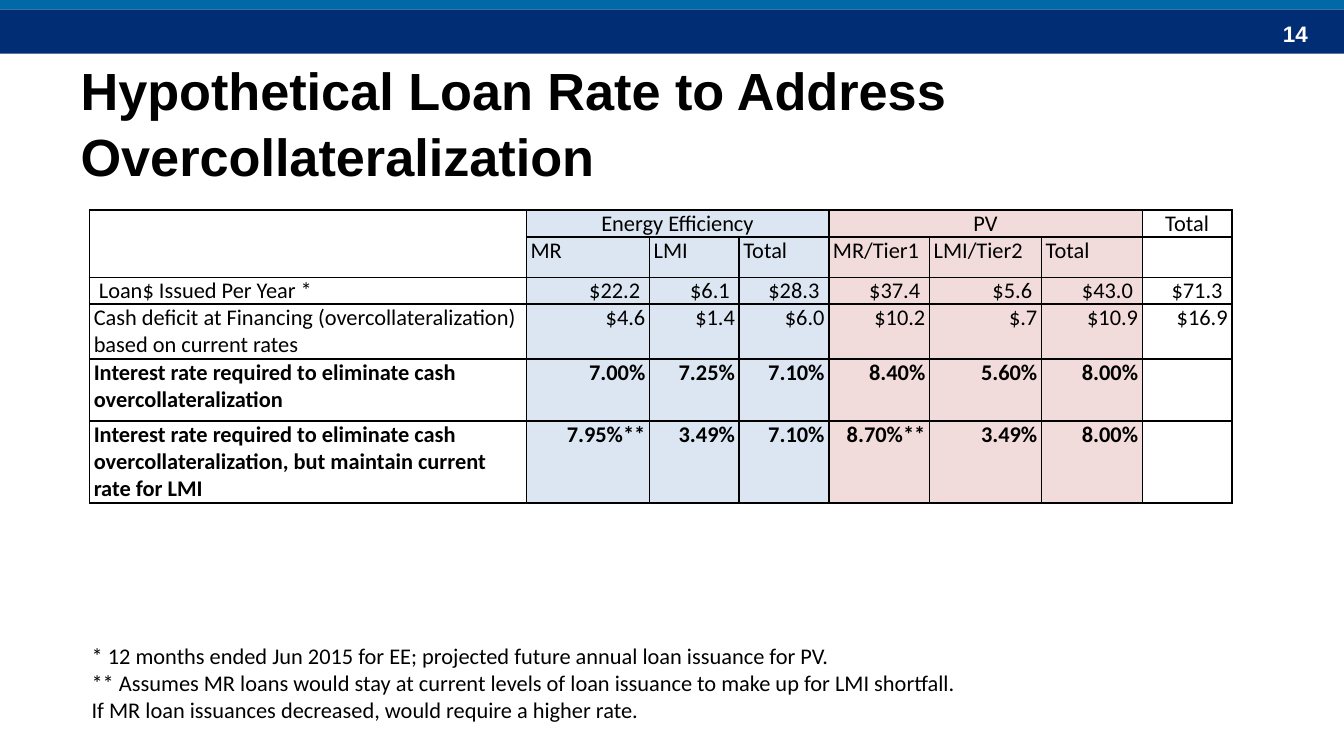
from pptx import Presentation
from pptx.dml.color import RGBColor
from pptx.enum.shapes import MSO_SHAPE
from pptx.enum.text import MSO_ANCHOR, MSO_AUTO_SIZE, PP_ALIGN
from pptx.oxml import parse_xml
from pptx.oxml.ns import nsdecls
from pptx.util import Pt

NAVY = RGBColor(0x00, 0x2D, 0x73)
TEAL = RGBColor(0x00, 0x69, 0xA6)
BLACK = RGBColor(0, 0, 0)
WHITE = RGBColor(255, 255, 255)
BLUE = RGBColor(0xDC, 0xE6, 0xF2)
PINK = RGBColor(0xF2, 0xDC, 0xDB)

TITLE = "Hypothetical Loan Rate to Address Overcollateralization"
ROWS = [
    ["", "Energy Efficiency", "", "", "PV", "", "", "Total"],
    ["", "MR", "LMI", "Total", "MR/Tier1", "LMI/Tier2", "Total", ""],
    ["Loan$ Issued Per Year *", "$22.2", "$6.1", "$28.3", "$37.4", "$5.6", "$43.0", "$71.3"],
    ["Cash deficit at Financing (overcollateralization) based on current rates",
     "$4.6", "$1.4", "$6.0", "$10.2", "$.7", "$10.9", "$16.9"],
    ["Interest rate required to eliminate cash overcollateralization",
     "7.00%", "7.25%", "7.10%", "8.40%", "5.60%", "8.00%", ""],
    ["Interest rate required to eliminate cash overcollateralization, "
     "but maintain current rate for LMI",
     "7.95%**", "3.49%", "7.10%", "8.70%**", "3.49%", "8.00%", ""],
]
NOTES = [
    "* 12 months ended Jun 2015 for EE; projected future annual loan issuance for PV.",
    "** Assumes MR loans would stay at current levels of loan issuance to make up for LMI shortfall.",
    "If MR loan issuances decreased, would require a higher rate.",
]
WIDTHS = [234, 66, 48, 48, 54, 60, 54, 48]
HEIGHTS = [14.4, 20.2, 14.4, 29.5, 33, 44]
FILLS = [None] + [BLUE] * 3 + [PINK] * 3 + [None]
MERGES = [(0, 0, 1, 0), (0, 1, 0, 3), (0, 4, 0, 6)]


def write(para, text, size=12, face="Calibri", bold=False, color=BLACK):
    run = para.add_run()
    run.text = text
    font = run.font
    font.size, font.name, font.bold = Pt(size), face, bold
    font.color.rgb = color


def band(slide, top, height, color):
    bar = slide.shapes.add_shape(MSO_SHAPE.RECTANGLE, 0, Pt(top), Pt(720), Pt(height))
    bar.shadow.inherit = False
    bar.fill.solid()
    bar.fill.fore_color.rgb = color
    bar.line.fill.background()


def textbox(slide, left, top, width, height):
    box = slide.shapes.add_textbox(Pt(left), Pt(top), Pt(width), Pt(height))
    return box.text_frame


def border(cell):
    props = cell._tc.get_or_add_tcPr()
    for i, side in enumerate(("lnL", "lnR", "lnT", "lnB")):
        props.insert(i, parse_xml(
            f'<a:{side} {nsdecls("a")} w="12700"><a:solidFill>'
            f'<a:srgbClr val="{BLACK}"/></a:solidFill></a:{side}>'))


def style(cell, row, col):
    pad = Pt(5 if row == 2 else 2.25)
    cell.margin_left = cell.margin_right = pad
    cell.margin_top = cell.margin_bottom = 0
    if FILLS[col]:
        cell.fill.solid()
        cell.fill.fore_color.rgb = FILLS[col]
    else:
        cell.fill.background()
    border(cell)


def add_rates(slide):
    frame = slide.shapes.add_table(
        len(ROWS), len(WIDTHS), Pt(48), Pt(112.5), Pt(sum(WIDTHS)), Pt(sum(HEIGHTS)))
    table = frame.table
    table.first_row = table.horz_banding = False
    for col, width in zip(table.columns, WIDTHS):
        col.width = Pt(width)
    for row, height in zip(table.rows, HEIGHTS):
        row.height = Pt(height)
    for r1, c1, r2, c2 in MERGES:
        table.cell(r1, c1).merge(table.cell(r2, c2))
    for r, row in enumerate(ROWS):
        for c, text in enumerate(row):
            cell = table.cell(r, c)
            style(cell, r, c)
            if cell.is_spanned:
                continue
            para = cell.text_frame.paragraphs[0]
            if r == 0:
                para.alignment = PP_ALIGN.CENTER
            elif r > 1 and c > 0:
                para.alignment = PP_ALIGN.RIGHT
            write(para, text, bold=r > 3)


def main():
    deck = Presentation()
    deck.slide_width, deck.slide_height = Pt(720), Pt(405)
    slide = deck.slides.add_slide(deck.slide_layouts[5])

    band(slide, 5, 23.75, NAVY)
    page = textbox(slide, 653.75, 7.2, 54, 21.6)
    page.paragraphs[0].alignment = PP_ALIGN.RIGHT
    write(page.paragraphs[0], "14", 12, "Arial", True, WHITE)
    band(slide, -1.5, 6.5, TEAL)

    title = slide.shapes.title
    title.left, title.top, title.width, title.height = Pt(36), Pt(31), Pt(648), Pt(67.7)
    body = title.text_frame
    body.auto_size = MSO_AUTO_SIZE.NONE
    body.vertical_anchor = MSO_ANCHOR.MIDDLE
    head = body.paragraphs[0]
    head.alignment = PP_ALIGN.LEFT
    head.line_spacing = 1.05
    write(head, TITLE, 28, "Arial", True)

    add_rates(slide)

    notes = textbox(slide, 42, 340.5, 481.7, 51)
    notes.word_wrap = False
    notes.auto_size = MSO_AUTO_SIZE.SHAPE_TO_FIT_TEXT
    for i, text in enumerate(NOTES):
        write(notes.add_paragraph() if i else notes.paragraphs[0], text)

    deck.save("out.pptx")


if __name__ == "__main__":
    main()
